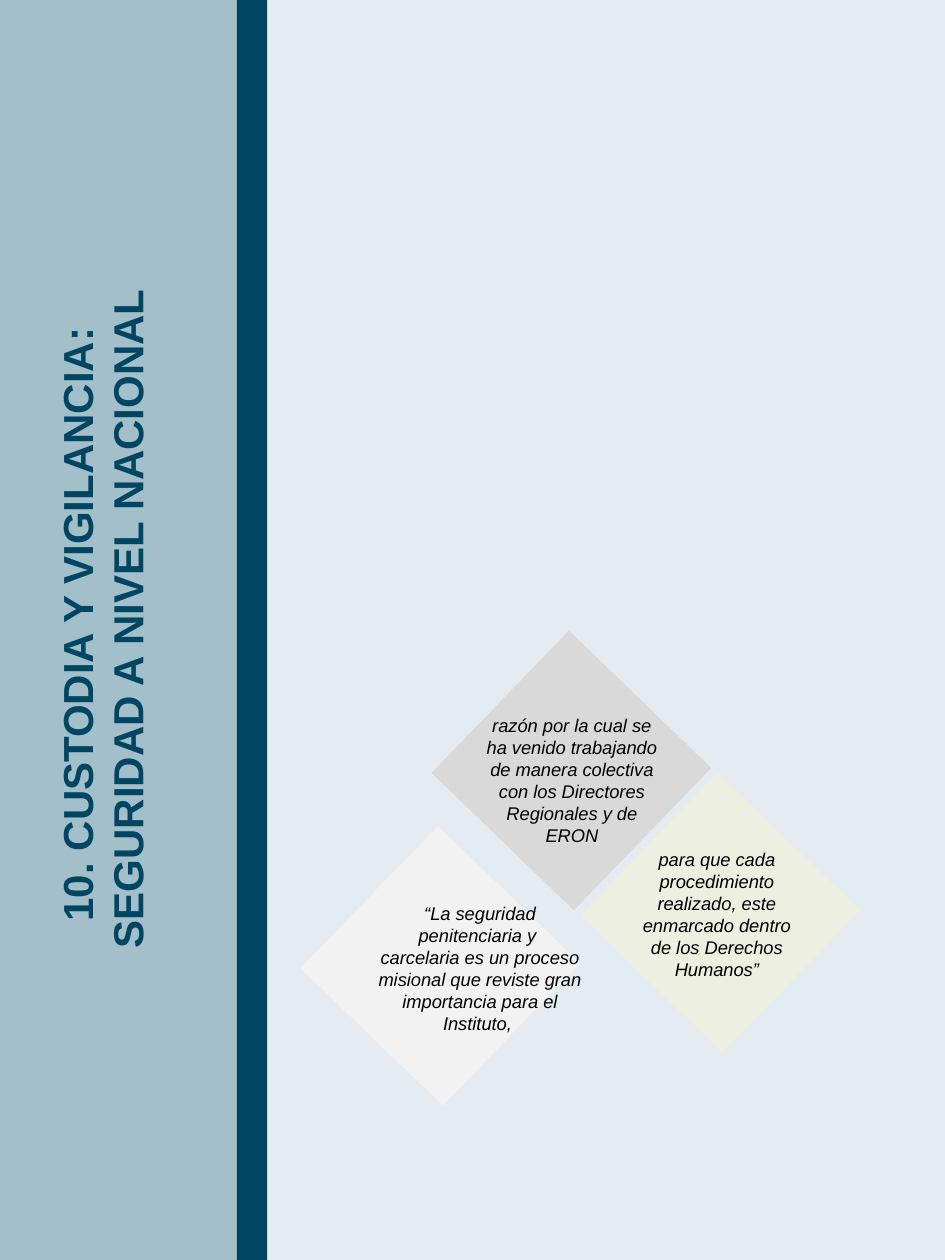
from pptx import Presentation
from pptx import util as u
from pptx.dml.color import RGBColor
from pptx.enum import shapes, text

PALE = RGBColor(0xE4, 0xEC, 0xF1)
TEAL = RGBColor(0xA3, 0xBF, 0xC9)
NAVY = RGBColor(0x00, 0x46, 0x63)
BLACK = RGBColor(0, 0, 0)
WIDTH, HEIGHT = 7.5, 10
BAND, STRIPE = 1.88, 0.24
TILE, TILT = 1.57, 44
TEXT_HEIGHT = 1.16
TITLE_CENTER, TITLE_LENGTH, TITLE_DEPTH = (0.86, 4.91), 8.83, 1.01

# Content
TITLE = ["10. CUSTODIA Y VIGILANCIA: ", "SEGURIDAD A NIVEL NACIONAL"]
# Tile corner, tile colour, text corner, text width, paragraphs
QUOTES = [
    ((2.71, 6.88), RGBColor(0xF2, 0xF2, 0xF2), (2.87, 7.11), 1.88,
     ["“La seguridad penitenciaria y ",
      "carcelaria es un proceso misional que reviste gran importancia para el Instituto, "]),
    ((3.75, 5.33), RGBColor(0xD9, 0xD9, 0xD9), (3.71, 5.62), 1.66,
     ["razón por la cual se ha venido trabajando de manera colectiva "
      "con los Directores Regionales y de ERON"]),
    ((4.93, 6.46), RGBColor(0xED, 0xEF, 0xE0), (4.98, 6.68), 1.42,
     ["para que cada procedimiento realizado, este enmarcado dentro "
      "de los Derechos Humanos”"]),
]


def add_block(page, left, top, width, height, color, rotation=0):
    block = page.shapes.add_shape(
        shapes.MSO_SHAPE.RECTANGLE, *map(u.Inches, (left, top, width, height)))
    block.fill.solid()
    block.fill.fore_color.rgb = color
    block.line.fill.background()
    block.shadow.inherit = False
    block.rotation = rotation


def write(box, lines, size, color, bold=False, italic=False):
    frame = box.text_frame
    frame.word_wrap = True
    frame.vertical_anchor = text.MSO_ANCHOR.TOP
    frame.auto_size = text.MSO_AUTO_SIZE.NONE
    for index, line in enumerate(lines):
        para = frame.add_paragraph() if index else frame.paragraphs[0]
        para.alignment = text.PP_ALIGN.CENTER
        span = para.add_run()
        span.text = line
        font = span.font
        font.name, font.size, font.color.rgb = "Arial", u.Pt(size), color
        font.bold, font.italic = bold, italic


deck = Presentation()
deck.slide_width, deck.slide_height = u.Inches(WIDTH), u.Inches(HEIGHT)
page = deck.slides.add_slide(deck.slide_layouts.get_by_name("Title Only"))
page.background.fill.solid()
page.background.fill.fore_color.rgb = PALE

# Side band and stripe, behind the title
title = page.shapes.title
add_block(page, 0, 0, BAND, HEIGHT, TEAL)
add_block(page, BAND, 0, STRIPE, HEIGHT, NAVY)
page.shapes._spTree.append(title._element)

# Title turned to read upwards
center_x, center_y = TITLE_CENTER
title.left = u.Inches(center_x - TITLE_LENGTH / 2)
title.top = u.Inches(center_y - TITLE_DEPTH / 2)
title.width, title.height = u.Inches(TITLE_LENGTH), u.Inches(TITLE_DEPTH)
title.rotation = 270
write(title, TITLE, 24, NAVY, bold=True)

# Tilted tiles, then the quote over them
for corner, color, *_ in QUOTES:
    add_block(page, *corner, TILE, TILE, color, TILT)
for *_, corner, width, lines in QUOTES:
    box = page.shapes.add_textbox(*map(u.Inches, (*corner, width, TEXT_HEIGHT)))
    write(box, lines, 10.5, BLACK, italic=True)

deck.save("out.pptx")
